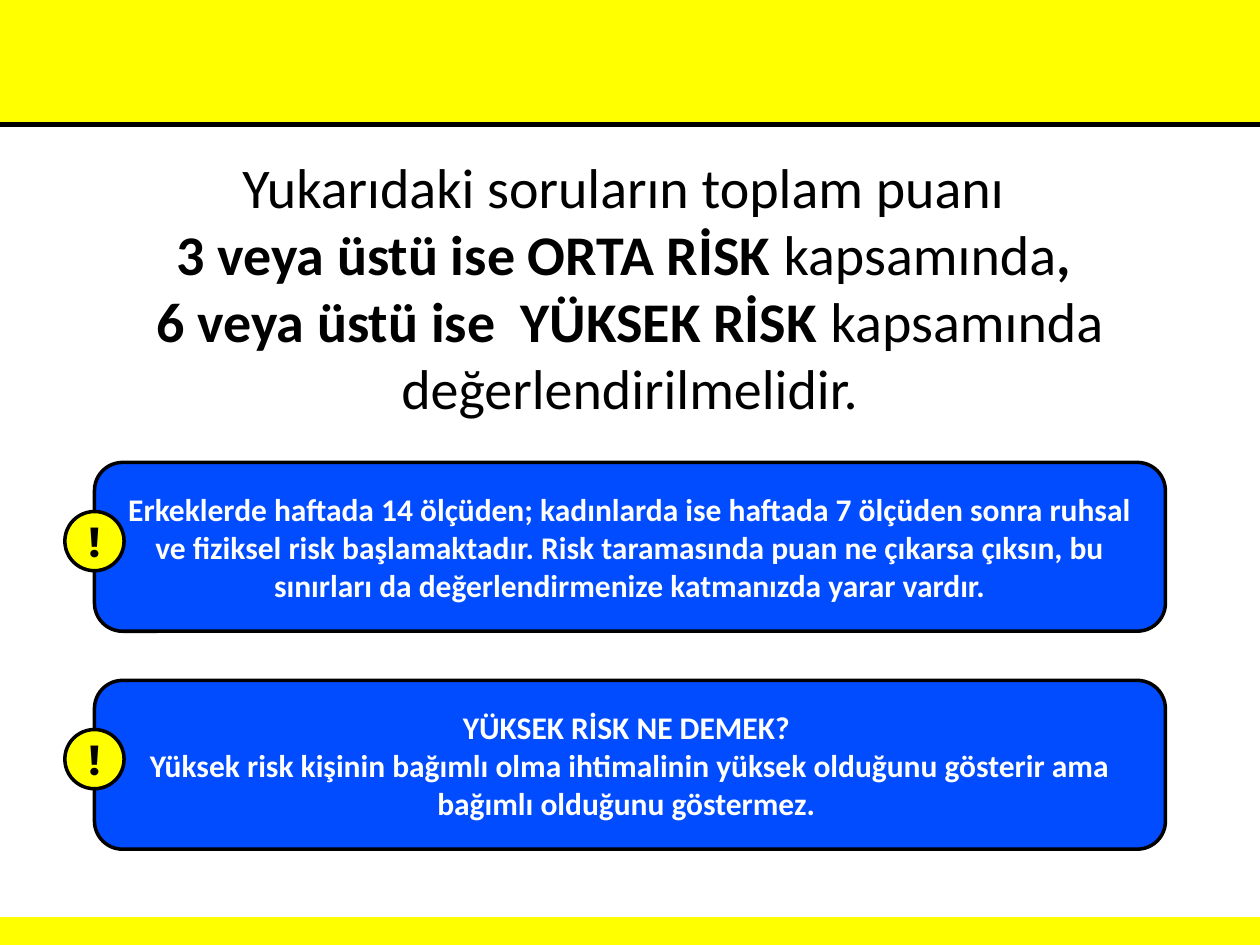
from dataclasses import dataclass

from pptx import Presentation
from pptx.dml.color import RGBColor
from pptx.enum.shapes import MSO_CONNECTOR, MSO_SHAPE
from pptx.enum.text import MSO_ANCHOR, PP_ALIGN
from pptx.oxml.ns import qn
from pptx.shapes.autoshape import Shape
from pptx.slide import Slide
from pptx.text.text import TextFrame, _Paragraph
from pptx.util import Inches, Pt
from lxml import etree

RECTANGLE = MSO_SHAPE.RECTANGLE
ROUNDED_RECTANGLE = MSO_SHAPE.ROUNDED_RECTANGLE
OVAL = MSO_SHAPE.OVAL
STRAIGHT = MSO_CONNECTOR.STRAIGHT
MIDDLE = MSO_ANCHOR.MIDDLE
CENTER = PP_ALIGN.CENTER

YELLOW = RGBColor(0xFF, 0xFF, 0x00)
BLUE = RGBColor(0x01, 0x4C, 0xFF)
BLACK = RGBColor(0x00, 0x00, 0x00)
WHITE = RGBColor(0xFF, 0xFF, 0xFF)

SLIDE_WIDTH, SLIDE_HEIGHT = 10, 7.5
HEADER_HEIGHT, FOOTER_HEIGHT = 0.99, 0.21
CONTENT_LEFT, CONTENT_WIDTH = 0.75, 8.5
CARD_TOP, CARD_HEIGHT, CARD_PITCH = 3.67, 1.34, 1.73
BADGE_SIZE, BADGE_OFFSET = 0.47, 0.39


@dataclass(frozen=True)
class Box:
    left: float
    top: float
    width: float
    height: float


@dataclass(frozen=True)
class TextStyle:
    size: int
    font: str
    color: RGBColor


@dataclass(frozen=True)
class TextRun:
    text: str
    bold: bool


TITLE_STYLE = TextStyle(32, "Calibri", BLACK)
CARD_STYLE = TextStyle(18, "Calibri", WHITE)
BADGE_STYLE = TextStyle(24, "Montserrat", BLACK)

TITLE_LINES = [
    [TextRun("Yukarıdaki soruların toplam puanı ", False)],
    [
        TextRun("3 veya üstü ise ORTA RİSK ", True),
        TextRun("kapsamında", False),
        TextRun(", ", True),
    ],
    [
        TextRun("6 veya üstü ise  YÜKSEK RİSK ", True),
        TextRun("kapsamında değerlendirilmelidir.", False),
    ],
]

CARDS = [
    [
        "Erkeklerde haftada 14 ölçüden; kadınlarda ise haftada 7 ölçüden sonra "
        "ruhsal ve fiziksel risk başlamaktadır. Risk taramasında puan ne çıkarsa "
        "çıksın, bu sınırları da değerlendirmenize katmanızda yarar vardır."
    ],
    [
        "YÜKSEK RİSK NE DEMEK? ",
        "Yüksek risk kişinin bağımlı olma ihtimalinin yüksek olduğunu gösterir "
        "ama bağımlı olduğunu göstermez. ",
    ],
]


def add_run(paragraph: _Paragraph, text_run: TextRun, style: TextStyle) -> None:
    run = paragraph.add_run()
    run.text = text_run.text
    run.font.size = Pt(style.size)
    run.font.name = style.font
    run.font.bold = text_run.bold
    run.font.color.rgb = style.color


def add_bold_paragraphs(frame: TextFrame, texts: list[str], style: TextStyle) -> None:
    frame.vertical_anchor = MIDDLE
    for index, text in enumerate(texts):
        paragraph = frame.add_paragraph() if index else frame.paragraphs[0]
        paragraph.alignment = CENTER
        add_run(paragraph, TextRun(text, True), style)


def add_filled_shape(
    slide: Slide, kind: MSO_SHAPE, box: Box, fill: RGBColor, line: RGBColor
) -> Shape:
    shape = slide.shapes.add_shape(
        kind, Inches(box.left), Inches(box.top), Inches(box.width), Inches(box.height)
    )
    shape.shadow.inherit = False
    shape.fill.solid()
    shape.fill.fore_color.rgb = fill
    shape.line.color.rgb = line
    shape.line.width = Pt(2)
    return shape


def add_bands(slide: Slide) -> None:
    header = Box(0, 0, SLIDE_WIDTH, HEADER_HEIGHT)
    footer = Box(0, SLIDE_HEIGHT - FOOTER_HEIGHT, SLIDE_WIDTH, FOOTER_HEIGHT)
    for band in (header, footer):
        add_filled_shape(slide, RECTANGLE, band, YELLOW, YELLOW)
    rule = slide.shapes.add_connector(
        STRAIGHT, 0, Inches(HEADER_HEIGHT), Inches(SLIDE_WIDTH), Inches(HEADER_HEIGHT)
    )
    rule.line.color.rgb = BLACK
    rule.line.width = Pt(3)
    etree.SubElement(rule._element.spPr, qn("a:effectLst"))


def add_title(slide: Slide) -> None:
    title = slide.shapes.add_textbox(
        Inches(CONTENT_LEFT), Inches(1.47), Inches(CONTENT_WIDTH), Inches(1.61)
    )
    frame = title.text_frame
    frame.word_wrap = True
    frame.vertical_anchor = MIDDLE
    paragraph = frame.paragraphs[0]
    paragraph.alignment = CENTER
    paragraph.font.size = Pt(TITLE_STYLE.size)
    for index, line in enumerate(TITLE_LINES):
        if index:
            paragraph.add_line_break()
        for text_run in line:
            add_run(paragraph, text_run, TITLE_STYLE)


def add_card(slide: Slide, top: float, texts: list[str]) -> None:
    box = Box(CONTENT_LEFT, top, CONTENT_WIDTH, CARD_HEIGHT)
    card = add_filled_shape(slide, ROUNDED_RECTANGLE, box, BLUE, BLACK)
    add_bold_paragraphs(card.text_frame, texts, CARD_STYLE)


def add_badge(slide: Slide, card_top: float) -> None:
    left = CONTENT_LEFT - BADGE_SIZE / 2
    box = Box(left, card_top + BADGE_OFFSET, BADGE_SIZE, BADGE_SIZE)
    badge = add_filled_shape(slide, OVAL, box, YELLOW, BLACK)
    frame = badge.text_frame
    frame.margin_left = frame.margin_right = Inches(0)
    frame.margin_top = frame.margin_bottom = Inches(0)
    add_bold_paragraphs(frame, ["!"], BADGE_STYLE)


def main() -> None:
    presentation = Presentation()
    presentation.slide_width = Inches(SLIDE_WIDTH)
    presentation.slide_height = Inches(SLIDE_HEIGHT)
    slide = presentation.slides.add_slide(presentation.slide_layouts[6])
    add_bands(slide)
    add_title(slide)
    for index, texts in enumerate(CARDS):
        card_top = CARD_TOP + index * CARD_PITCH
        add_card(slide, card_top, texts)
        add_badge(slide, card_top)
    presentation.save("out.pptx")


if __name__ == "__main__":
    main()
